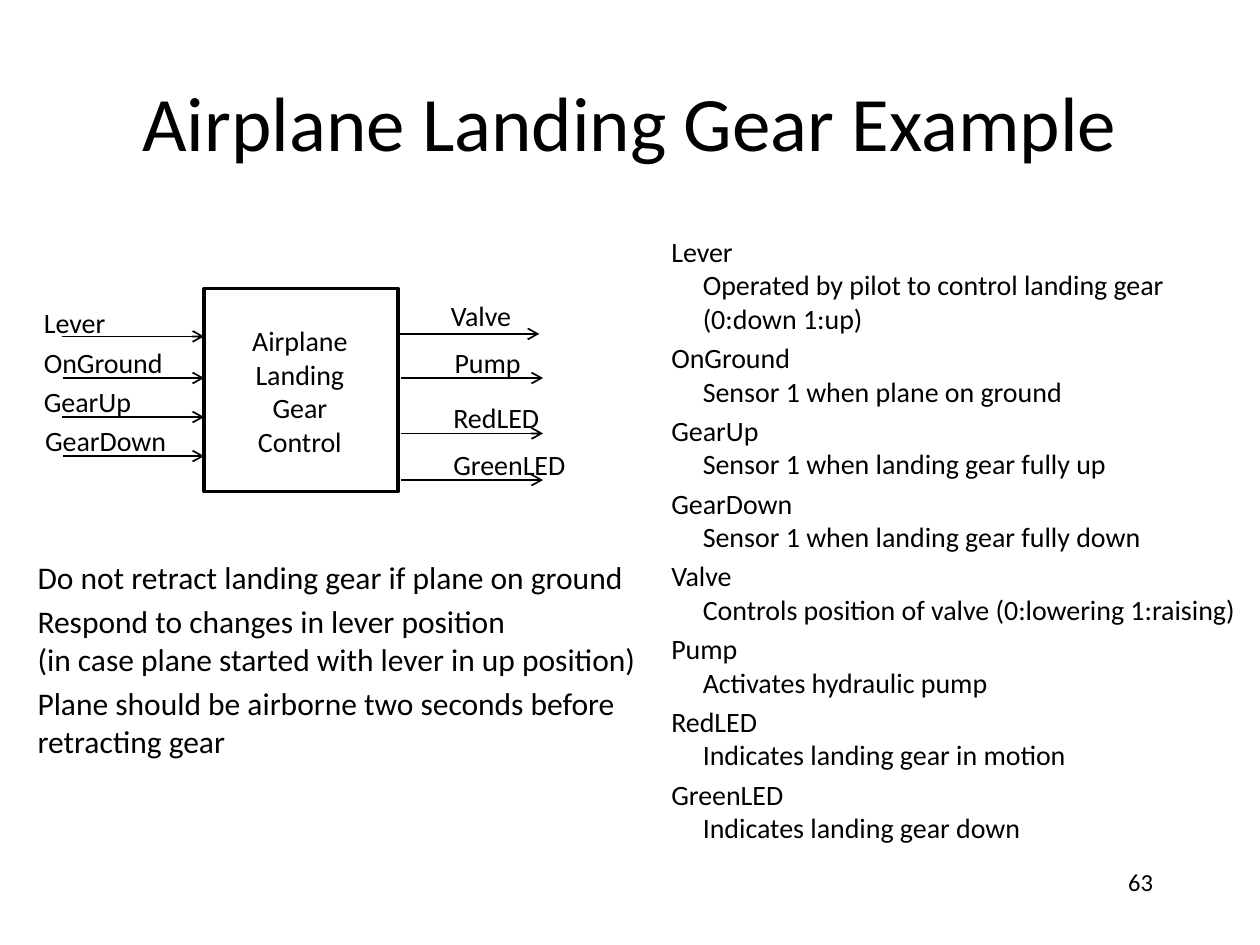
from typing import NamedTuple

from lxml import etree
from pptx import Presentation
from pptx.dml.color import RGBColor
from pptx.enum.shapes import MSO_CONNECTOR, MSO_SHAPE
from pptx.enum.text import MSO_ANCHOR, MSO_AUTO_SIZE, PP_ALIGN
from pptx.oxml.ns import qn
from pptx.util import Emu, Pt

LEFT, CENTER, RIGHT = PP_ALIGN.LEFT, PP_ALIGN.CENTER, PP_ALIGN.RIGHT
TOP, MIDDLE = MSO_ANCHOR.TOP, MSO_ANCHOR.MIDDLE
FIT = MSO_AUTO_SIZE.SHAPE_TO_FIT_TEXT
STRAIGHT, RECTANGLE = MSO_CONNECTOR.STRAIGHT, MSO_SHAPE.RECTANGLE
EMU_PER_PX = 9144
FONT = "Calibri"
BLACK, BORDER = "000000", "060000"


class Box(NamedTuple):
    """A rectangle in px."""
    x: int
    y: int
    w: int
    h: int


class Signal(NamedTuple):
    """A labelled arrow into or out of the controller."""
    name: str
    label: Box
    x1: int
    x2: int
    y: int


class Style(NamedTuple):
    """The look of one text box."""
    size: int
    align: PP_ALIGN = LEFT
    anchor: MSO_ANCHOR = TOP
    margin: int = 0
    indent: int = 0
    gap: float = 0.2
    wrap: bool = True
    fit: bool = True


SIGNALS = [
    Signal("Lever", Box(25, 238, 70, 37), 49, 162, 267),
    Signal("OnGround", Box(25, 269, 116, 37), 50, 162, 300),
    Signal("GearUp", Box(25, 300, 90, 37), 49, 162, 331),
    Signal("GearDown", Box(26, 331, 118, 37), 50, 162, 362),
    Signal("Valve", Box(348, 232, 70, 37), 316, 428, 265),
    Signal("Pump", Box(351, 269, 73, 37), 318, 431, 300),
    Signal("RedLED", Box(350, 313, 90, 37), 318, 431, 344),
    Signal("GreenLED", Box(350, 350, 111, 37), 318, 431, 381),
]
DEFINITIONS = [
    "Lever\nOperated by pilot to control landing gear\n(0:down 1:up)",
    "OnGround\nSensor 1 when plane on ground",
    "GearUp\nSensor 1 when landing gear fully up",
    "GearDown\nSensor 1 when landing gear fully down",
    "Valve\nControls position of valve (0:lowering 1:raising)",
    "Pump\nActivates hydraulic pump",
    "RedLED\nIndicates landing gear in motion",
    "GreenLED\nIndicates landing gear down",
]
REQUIREMENTS = [
    "Do not retract landing gear if plane on ground",
    "Respond to changes in lever position\n(in case plane started with lever in up position)",
    "Plane should be airborne two seconds before retracting gear",
]


def px(n: int) -> Emu:
    """Turn px into EMU."""
    return Emu(n * EMU_PER_PX)


def rgb(color: str) -> RGBColor:
    """Turn a hex string into a colour."""
    return RGBColor.from_string(color)


def add_text(s, box: Box, paragraphs: list[str], style: Style) -> None:
    """Draw a text box with one paragraph per string, broken at newlines."""
    tf = s.shapes.add_textbox(*map(px, box)).text_frame
    tf.word_wrap = style.wrap
    tf.vertical_anchor = style.anchor
    if style.fit:
        tf.auto_size = FIT
    for i, text in enumerate(paragraphs):
        p = tf.add_paragraph() if i else tf.paragraphs[0]
        p.alignment = style.align
        p.space_before = Pt(style.size * style.gap)
        pPr = p._p.get_or_add_pPr()
        pPr.set("marL", str(px(style.margin)))
        pPr.set("indent", str(px(style.indent)))
        for j, line in enumerate(text.split("\n")):
            if j:
                p.add_line_break()
            r = p.add_run()
            r.text = line
            r.font.name, r.font.size = FONT, Pt(style.size)
            r.font.color.rgb = rgb(BLACK)
        for br in p._p.findall(qn("a:br")):
            etree.SubElement(br, qn("a:rPr"), sz=str(style.size * 100))


def add_arrow(s, x1: int, x2: int, y: int) -> None:
    """Draw a horizontal arrow."""
    line = s.shapes.add_connector(STRAIGHT, px(x1), px(y), px(x2), px(y))
    line.line.color.rgb = rgb(BLACK)
    line.line.width = Pt(1)
    etree.SubElement(line.line._get_or_add_ln(), qn("a:tailEnd"), type="arrow")
    etree.SubElement(line._element.spPr, qn("a:effectLst"))


def add_controller(s, box: Box) -> None:
    """Draw the outlined controller block."""
    sp = s.shapes.add_shape(RECTANGLE, *map(px, box))
    sp.shadow.inherit = False
    sp.fill.background()
    sp.line.color.rgb = rgb(BORDER)
    sp.line.width = Pt(2)


def add_signal(s, signal: Signal) -> None:
    """Draw a signal's arrow and its name."""
    add_arrow(s, signal.x1, signal.x2, signal.y)
    add_text(s, signal.label, [signal.name], Style(16, wrap=False))


def main() -> None:
    """Build the slide and save it."""
    prs = Presentation()
    prs.slide_width, prs.slide_height = px(1000), px(750)
    s = prs.slides.add_slide(prs.slide_layouts[6])
    add_text(s, Box(75, 33, 850, 125), ["Airplane Landing Gear Example"],
             Style(44, CENTER, MIDDLE, gap=0, fit=False))
    add_text(s, Box(717, 683, 208, 50), ["63"], Style(14, RIGHT, gap=0, fit=False))
    add_controller(s, Box(162, 229, 154, 161))
    add_text(s, Box(144, 252, 150, 118), ["Airplane Landing Gear Control"],
             Style(16, CENTER, margin=38))
    for signal in SIGNALS:
        add_signal(s, signal)
    add_text(s, Box(523, 181, 477, 506), DEFINITIONS, Style(16, margin=25, indent=-25))
    add_text(s, Box(20, 438, 503, 210), REQUIREMENTS, Style(18))
    prs.save("out.pptx")


if __name__ == "__main__":
    main()
